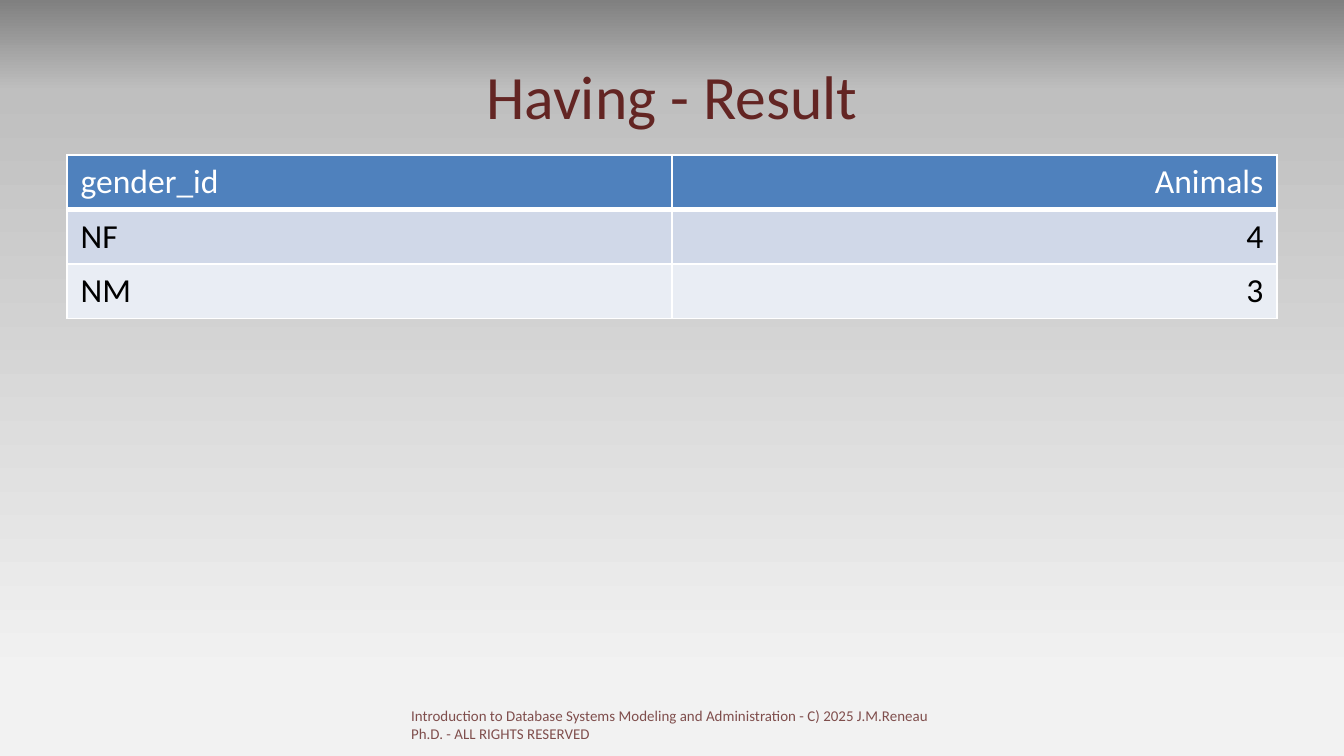
from copy import deepcopy

from lxml import etree
from pptx import Presentation
from pptx.dml.color import RGBColor
from pptx.enum.text import MSO_ANCHOR, PP_ALIGN
from pptx.oxml.ns import qn
from pptx.util import Cm, Pt

LEFT, CENTER, RIGHT = PP_ALIGN.LEFT, PP_ALIGN.CENTER, PP_ALIGN.RIGHT
TOP, MIDDLE = MSO_ANCHOR.TOP, MSO_ANCHOR.MIDDLE

MAROON = RGBColor(0x63, 0x25, 0x23)
WHITE = RGBColor(0xFF, 0xFF, 0xFF)
BLACK = RGBColor(0x00, 0x00, 0x00)
HEADER_BLUE = RGBColor(0x4F, 0x81, 0xBD)
BAND_FILLS = [RGBColor(0xD0, 0xD8, 0xE8), RGBColor(0xE9, 0xED, 0xF4)]
BACKGROUND_STOPS = [
    (0, RGBColor(0x80, 0x80, 0x80)),
    (0.12, RGBColor(0xBF, 0xBF, 0xBF)),
    (0.9, RGBColor(0xF2, 0xF2, 0xF2)),
]

FONT = "Calibri"
ROWS = [("gender_id", "Animals"), ("NF", "4"), ("NM", "3")]
COLUMN_ALIGNMENTS = [LEFT, RIGHT]
COLUMN_WIDTH = Cm(11.43)
ROW_HEIGHT = Cm(1.03)
FOOTER = ("Introduction to Database Systems Modeling and Administration"
          " - C) 2025 J.M.Reneau Ph.D. - ALL RIGHTS RESERVED")


def set_background(slide):
    fill = slide.background.fill
    fill.gradient()
    fill.gradient_angle = 270
    stop_list = next(slide.element.iter(qn("a:gsLst")))
    stop_list.append(deepcopy(stop_list[-1]))
    for stop, (position, color) in zip(fill.gradient_stops, BACKGROUND_STOPS):
        stop.position = position
        stop.color.rgb = color


def write_text(text_frame, text, size, color, alignment):
    paragraph = text_frame.paragraphs[0]
    paragraph.alignment = alignment
    run = paragraph.add_run()
    run.text = text
    run.font.name = FONT
    run.font.size = Pt(size)
    run.font.bold = False
    run.font.color.rgb = color
    return run


def add_text(slide, box, text, size, alignment=LEFT, anchor=TOP):
    text_frame = slide.shapes.add_textbox(*box).text_frame
    text_frame.word_wrap = True
    text_frame.vertical_anchor = anchor
    return write_text(text_frame, text, size, MAROON, alignment)


def set_opacity(run, percent):
    color = next(run.font.fill._xPr.iter(qn("a:srgbClr")))
    etree.SubElement(color, qn("a:alpha"), val=str(percent * 1000))


def set_borders(cell, bottom_width):
    properties = cell._tc.get_or_add_tcPr()
    widths = {"a:lnL": 1, "a:lnR": 1, "a:lnT": 1, "a:lnB": bottom_width}
    for index, (tag, width) in enumerate(widths.items()):
        line = etree.Element(qn(tag), w=str(Pt(width)))
        fill = etree.SubElement(line, qn("a:solidFill"))
        etree.SubElement(fill, qn("a:srgbClr"), val=str(WHITE))
        properties.insert(index, line)


def add_result_table(slide, left, top):
    column_count = len(COLUMN_ALIGNMENTS)
    table = slide.shapes.add_table(
        len(ROWS), column_count, left, top,
        COLUMN_WIDTH * column_count, ROW_HEIGHT * len(ROWS)).table
    for row_index, values in enumerate(ROWS):
        is_header = row_index == 0
        fill = HEADER_BLUE if is_header else BAND_FILLS[(row_index - 1) % 2]
        for column_index, value in enumerate(values):
            cell = table.cell(row_index, column_index)
            cell.fill.solid()
            cell.fill.fore_color.rgb = fill
            set_borders(cell, 3 if is_header else 1)
            write_text(cell.text_frame, value, 18,
                       WHITE if is_header else BLACK,
                       COLUMN_ALIGNMENTS[column_index])


def main():
    presentation = Presentation()
    presentation.slide_width = Cm(25.4)
    presentation.slide_height = Cm(14.29)
    slide = presentation.slides.add_slide(presentation.slide_layouts[6])
    set_background(slide)
    add_text(slide, (Cm(1.27), Cm(0.6), Cm(22.86), Cm(2.38)),
             "Having - Result", 33, CENTER, MIDDLE)
    add_result_table(slide, Cm(1.27), Cm(2.93))
    footer = add_text(slide, (Cm(7.52), Cm(13.23), Cm(10.31), Cm(0.76)),
                      FOOTER, 8)
    set_opacity(footer, 80)
    presentation.save("out.pptx")


if __name__ == "__main__":
    main()
